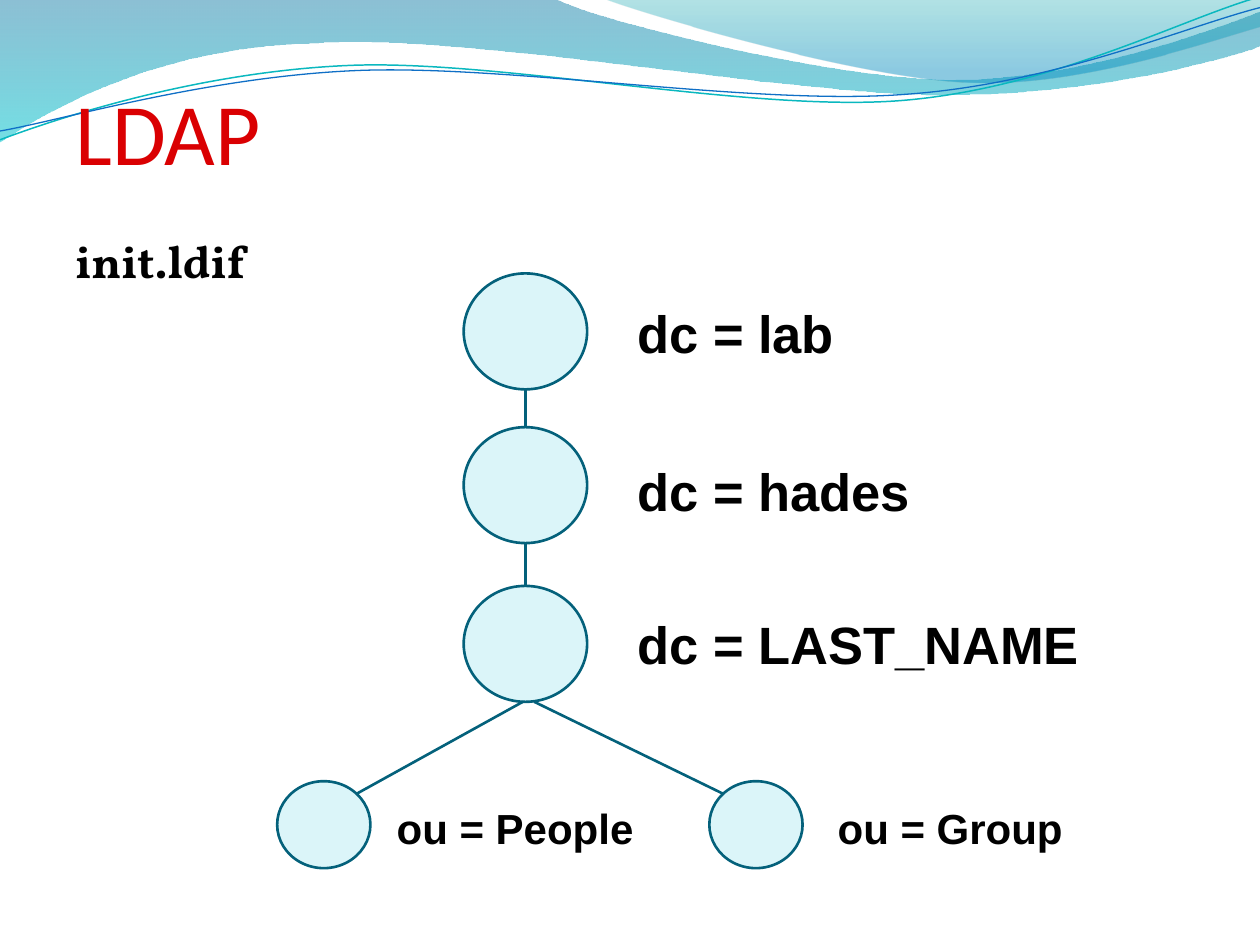
from math import cos, radians, sin

from lxml import etree
from pptx import Presentation
from pptx.dml.color import RGBColor
from pptx.enum import shapes, text
from pptx.oxml.ns import qn
from pptx.util import Inches, Pt

RED = RGBColor(0xDA, 0x00, 0x02)
BLACK = RGBColor(0, 0, 0)
PALE = RGBColor(0xDB, 0xF5, 0xF9)
DEEP = RGBColor(0x04, 0x61, 0x7B)
NAVY = RGBColor(0x00, 0x74, 0xA1)
AQUA = RGBColor(0x00, 0xC6, 0xCF)
TEAL = RGBColor(0x00, 0xA1, 0xA9)
SKY = RGBColor(0x00, 0x8B, 0xBF)
CYAN = RGBColor(0x0A, 0xB8, 0xBF)
BLUE = RGBColor(0x0F, 0x6F, 0xC6)

# Box, then path steps: 2 numbers draw a line, 6 draw a Bezier curve.
# Gradient stops: position, colour, opacity in percent.
BANDS = [
    ((-0.01, -0.01, 10.02, 1.14),
     [(0, 0), (4.4, -0.01), (4.76, 0.17, 6.64, 0.63, 7.58, 0.63),
      (8.53, 0.63, 9.58, 0.26, 10, 0.09), (10.01, 0.36),
      (9.83, 0.44, 8.7, 0.76, 7.46, 0.75), (6.22, 0.75, 3.82, 0.28, 2.57, 0.34),
      (1.29, 0.36, 0.46, 0.83, -0.01, 1.13), (0, 0)],
     [(0, NAVY, 45), (1, AQUA, 55)]),
    ((4.79, -0.01, 5.21, 0.7),
     [(4.79, -0.01), (5.09, 0.11, 6.82, 0.62, 7.69, 0.65),
      (8.56, 0.69, 9.61, 0.32, 10, 0.21), (10, 0), (4.79, -0.01)],
     [(0, TEAL, 30), (0.8, SKY, 45)]),
]
TILT = -2.7
WAVES = [
    ((-0.02, 0.22, 10.02, 0.71),
     [(0, 1.11), (0.48, 0.93, 1.58, 0.57, 2.77, 0.52),
      (3.95, 0.47, 5.93, 0.89, 7.13, 0.8), (8.33, 0.71, 9.38, 0.15, 9.98, -0.02)],
     CYAN, 0.85),
    ((-0.02, 0.3, 10.03, 0.58),
     [(0, 1.04), (0.47, 0.96, 1.64, 0.61, 2.83, 0.56),
      (4.03, 0.51, 5.97, 0.84, 7.17, 0.75), (8.36, 0.67, 9.41, 0.21, 10, 0.06)],
     BLUE, 0.75),
]

# Node: left, top; label: text, left, top, width, height
BIG, SMALL = (0.98, 0.92), (0.74, 0.69)
TRUNK = [
    (3.68, 2.17, ("dc = lab", 4.96, 2.29, 2.86, 0.66)),
    (3.68, 3.39, ("dc = hades", 4.96, 3.54, 2.76, 0.63)),
    (3.68, 4.65, ("dc = LAST_NAME", 4.96, 4.76, 3.98, 0.69)),
]
LEAVES = [
    (2.2, 6.2, ("ou = People", 3.05, 6.27, 2.23, 0.56)),
    (5.63, 6.2, ("ou = Group", 6.55, 6.27, 2.04, 0.56)),
]
FORKS = [((4.15, 5.57), (2.83, 6.3)), ((4.24, 5.57), (5.74, 6.3))]


def add_path(slide, box, steps, close, tilt=0):
    """Add a curved outline; steps give its place after the box is tilted."""
    left, top, width, height = box
    pen = slide.shapes.build_freeform(0, 0)
    pen.add_line_segments([(Inches(width), Inches(height))], close=False)
    shape = pen.convert_to_shape(Inches(left), Inches(top))
    shape.rotation = tilt % 360
    shape.shadow.inherit = False

    turn = radians(-tilt)
    route = next(shape.element.spPr.iter(qn("a:path")))
    for old in list(route):
        route.remove(old)
    for i, step in enumerate(steps):
        kind = "moveTo" if i == 0 else "lnTo" if len(step) == 2 else "cubicBezTo"
        part = etree.SubElement(route, qn("a:" + kind))
        for x, y in zip(step[::2], step[1::2]):
            dx, dy = x - left - width / 2, y - top - height / 2
            point = etree.SubElement(part, qn("a:pt"))
            point.set("x", str(Inches(width / 2 + dx * cos(turn) - dy * sin(turn))))
            point.set("y", str(Inches(height / 2 + dx * sin(turn) + dy * cos(turn))))
    if close:
        etree.SubElement(route, qn("a:close"))
    return shape


def add_band(slide, box, steps, stops):
    band = add_path(slide, box, steps, True)
    band.line.fill.background()
    band.fill.gradient()
    band.fill.gradient_angle = 270
    for stop, (place, color, _) in zip(band.fill.gradient_stops, stops):
        stop.position = place
        stop.color.rgb = color
    tints = band.element.spPr.iter(qn("a:srgbClr"))
    for tint, (_, _, alpha) in zip(tints, stops):
        etree.SubElement(tint, qn("a:alpha")).set("val", str(alpha * 1000))


def add_wave(slide, box, steps, color, width):
    wave = add_path(slide, box, steps, False, TILT)
    wave.fill.background()
    wave.line.color.rgb = color
    wave.line.width = Pt(width)


def add_text(slide, words, left, top, width, height, size,
             font="Arial", color=BLACK, bold=True, anchor=text.MSO_ANCHOR.TOP):
    box = slide.shapes.add_textbox(*map(Inches, (left, top, width, height)))
    frame = box.text_frame
    frame.word_wrap = True
    frame.vertical_anchor = anchor
    frame.margin_left = frame.margin_right = Inches(0.1)
    frame.margin_top = frame.margin_bottom = Inches(0.1)
    frame.text = words
    style = frame.paragraphs[0].runs[0].font
    style.name, style.size, style.bold = font, Pt(size), bold
    style.color.rgb = color


def add_node(slide, left, top, size, label, points):
    node = slide.shapes.add_shape(shapes.MSO_SHAPE.OVAL,
                                  *map(Inches, (left, top, *size)))
    node.shadow.inherit = False
    node.fill.solid()
    node.fill.fore_color.rgb = PALE
    node.line.color.rgb = DEEP
    node.line.width = Pt(1.5)
    add_text(slide, *label, points)


def add_link(slide, start, end):
    link = slide.shapes.add_connector(shapes.MSO_CONNECTOR.STRAIGHT,
                                      *map(Inches, (*start, *end)))
    link.line.color.rgb = DEEP
    link.line.width = Pt(1.5)
    etree.SubElement(link.element.spPr, qn("a:effectLst"))


def main():
    deck = Presentation()
    deck.slide_width, deck.slide_height = Inches(10), Inches(7.5)
    slide = deck.slides.add_slide(deck.slide_layouts[6])

    for band in BANDS:
        add_band(slide, *band)
    for wave in WAVES:
        add_wave(slide, *wave)

    add_text(slide, "LDAP", 0.5, 0.3, 9, 1.25, 50, "Calibri", RED, False,
             text.MSO_ANCHOR.BOTTOM)
    add_text(slide, "init.ldif", 0.5, 1.75, 1.99, 0.88, 26, "Vollkorn")

    for nodes, size, points in ((TRUNK, BIG, 30), (LEAVES, SMALL, 24)):
        for left, top, label in nodes:
            add_node(slide, left, top, size, label, points)

    for upper, lower in zip(TRUNK, TRUNK[1:]):
        middle = upper[0] + BIG[0] / 2
        add_link(slide, (middle, upper[1] + BIG[1]), (middle, lower[1]))
    for fork in FORKS:
        add_link(slide, *fork)

    deck.save("out.pptx")


if __name__ == "__main__":
    main()
